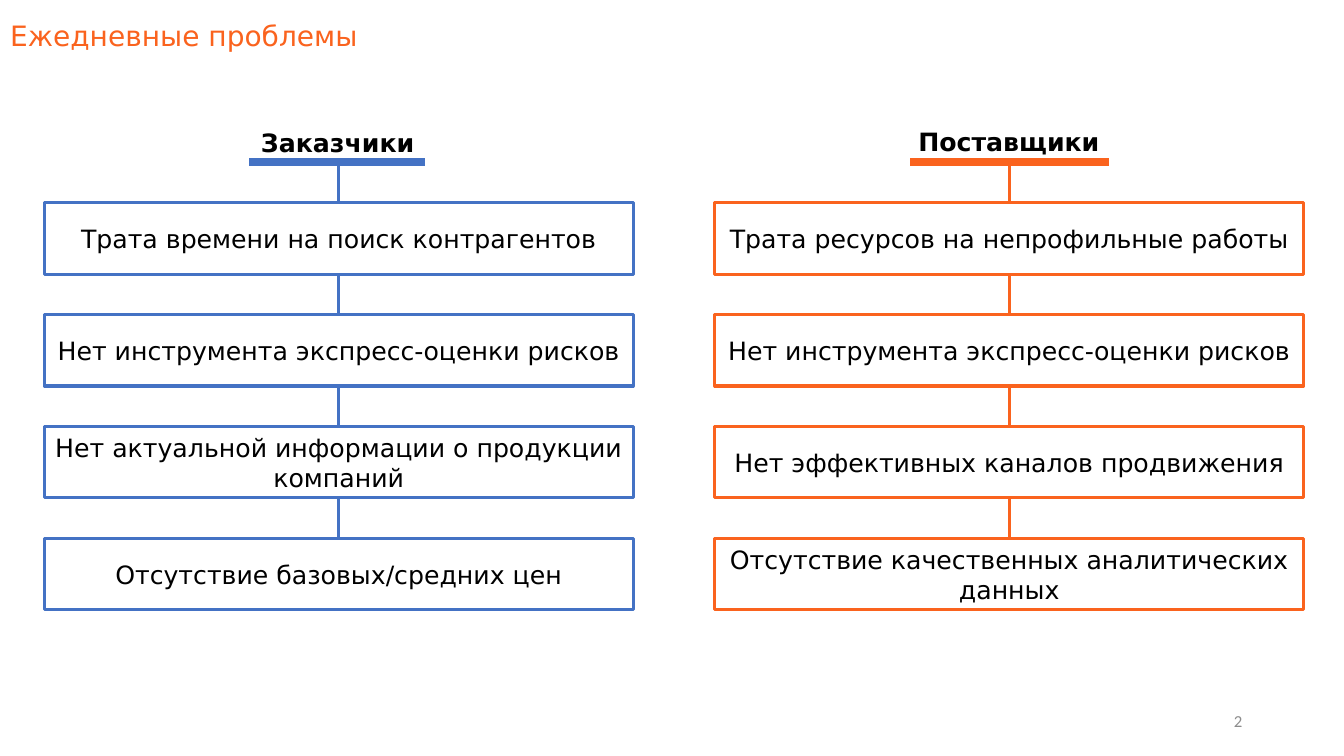
from dataclasses import dataclass

from lxml import etree
from pptx import Presentation
from pptx.dml.color import RGBColor
from pptx.enum.shapes import MSO_CONNECTOR, MSO_SHAPE
from pptx.enum.text import MSO_ANCHOR, MSO_AUTO_SIZE, PP_ALIGN
from pptx.oxml.ns import qn
from pptx.shapes.autoshape import Shape
from pptx.shapes.connector import Connector
from pptx.slide import Slide
from pptx.util import Emu, Pt

LEFT, MID, RIGHT = PP_ALIGN.LEFT, PP_ALIGN.CENTER, PP_ALIGN.RIGHT
TOP, MIDDLE = MSO_ANCHOR.TOP, MSO_ANCHOR.MIDDLE
GROW, FIXED = MSO_AUTO_SIZE.SHAPE_TO_FIT_TEXT, MSO_AUTO_SIZE.NONE
RECT, LINE = MSO_SHAPE.RECTANGLE, MSO_CONNECTOR.STRAIGHT
SCALE = 9144
TITLE_ONLY = 5
SITE_TOP, SITE_BOTTOM = 0, 2

BOX_W, BOX_H, STEP = 584, 71, 111
BAR_Y, BOX_Y = 161, 201


@dataclass(frozen=True)
class Theme:
    blue: str = "4472C4"
    orange: str = "FA631E"
    black: str = "000000"
    white: str = "FFFFFF"
    gray: str = "8C8C8C"
    font: str = "DejaVu Sans"
    small: str = "Calibri"
    title: int = 20
    body: int = 18
    note: int = 12
    thin: float = 2.25
    thick: float = 6


@dataclass(frozen=True)
class Area:
    x: int
    y: int
    w: int
    h: int


@dataclass(frozen=True)
class Column:
    head: str
    area: Area
    bar: tuple[int, int]
    left: int
    color: str
    items: tuple[str, ...]


THEME = Theme()
COLUMNS = (
    Column("Заказчики", Area(249, 121, 174, 40), (247, 422), 44, THEME.blue, (
        "Трата времени на поиск контрагентов",
        "Нет инструмента экспресс-оценки рисков",
        "Нет актуальной информации о продукции компаний",
        "Отсутствие базовых/средних цен",
    )),
    Column("Поставщики", Area(901, 120, 200, 40), (903, 1100), 709, THEME.orange, (
        "Трата ресурсов на непрофильные работы",
        "Нет инструмента экспресс-оценки рисков",
        "Нет эффективных каналов продвижения",
        "Отсутствие качественных аналитических данных",
    )),
)


def px(value: int) -> Emu:
    return Emu(value * SCALE)


def place(area: Area) -> tuple[Emu, Emu, Emu, Emu]:
    return px(area.x), px(area.y), px(area.w), px(area.h)


def write(shape: Shape, text: str, color: str, align: PP_ALIGN,
          anchor: MSO_ANCHOR = MIDDLE, wrap: bool = True,
          fit: MSO_AUTO_SIZE = FIXED, **style: object) -> None:
    frame = shape.text_frame
    frame.text = text
    layout = {"word_wrap": wrap, "auto_size": fit, "vertical_anchor": anchor}
    for name, value in layout.items():
        setattr(frame, name, value)
    par = frame.paragraphs[0]
    par.alignment = align
    font = par.runs[0].font
    looks = {"name": THEME.font, "size": Pt(THEME.body), "bold": False} | style
    for name, value in looks.items():
        setattr(font, name, value)
    font.color.rgb = RGBColor.from_string(color)


def add_line(slide: Slide, start: tuple[int, int], end: tuple[int, int],
             color: str, width: float) -> Connector:
    line = slide.shapes.add_connector(LINE, *map(px, start + end))
    line.line.color.rgb = RGBColor.from_string(color)
    line.line.width = Pt(width)
    etree.SubElement(line._element.spPr, qn("a:effectLst"))
    return line


def add_box(slide: Slide, area: Area, text: str, color: str) -> Shape:
    box = slide.shapes.add_shape(RECT, *place(area))
    box.shadow.inherit = False
    box.fill.solid()
    box.fill.fore_color.rgb = RGBColor.from_string(THEME.white)
    box.line.color.rgb = RGBColor.from_string(color)
    box.line.width = Pt(THEME.thin)
    write(box, text, THEME.black, MID)
    return box


def add_column(slide: Slide, col: Column) -> None:
    head = slide.shapes.add_textbox(*place(col.area))
    write(head, col.head, THEME.black, LEFT, TOP, False, GROW, bold=True)
    begin, end = col.bar
    add_line(slide, (begin, BAR_Y), (end, BAR_Y), col.color, THEME.thick)
    axis = col.left + BOX_W // 2
    prior, foot = None, BAR_Y
    for row, text in enumerate(col.items):
        top = BOX_Y + row * STEP
        box = add_box(slide, Area(col.left, top, BOX_W, BOX_H), text, col.color)
        stem = add_line(slide, (axis, foot), (axis, top), col.color, THEME.thin)
        if prior is not None:
            stem.begin_connect(prior, SITE_BOTTOM)
        stem.end_connect(box, SITE_TOP)
        prior, foot = box, top + BOX_H


def add_title(slide: Slide) -> None:
    title = slide.shapes.title
    spots = zip(("left", "top", "width", "height"), place(Area(0, 0, 1150, 74)))
    for name, value in spots:
        setattr(title, name, value)
    write(title, "Ежедневные проблемы", THEME.orange, LEFT, size=Pt(THEME.title))
    title.text_frame.paragraphs[0].line_spacing = 0.9


def main() -> None:
    deck = Presentation()
    deck.slide_width, deck.slide_height = px(1333), px(750)
    slide = deck.slides.add_slide(deck.slide_layouts[TITLE_ONLY])
    add_title(slide)
    for col in COLUMNS:
        add_column(slide, col)
    number = slide.shapes.add_textbox(*place(Area(942, 695, 300, 40)))
    write(number, "2", THEME.gray, RIGHT, name=THEME.small, size=Pt(THEME.note))
    deck.save("out.pptx")


if __name__ == "__main__":
    main()
